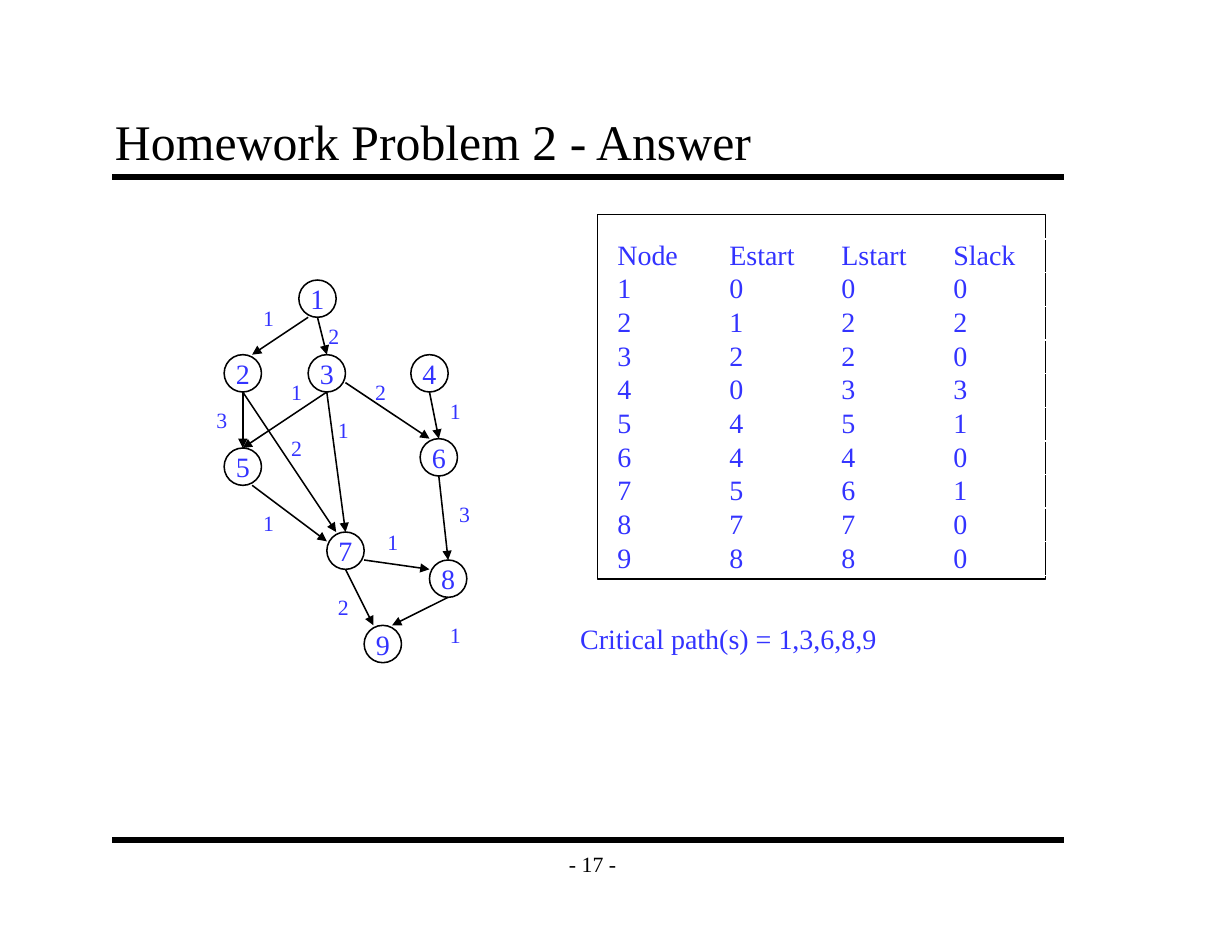
from lxml import etree
from pptx import Presentation
from pptx.dml.color import RGBColor
from pptx.enum import shapes as kinds, text as txt
from pptx.oxml.ns import qn
from pptx.util import Cm, Pt

BLACK = RGBColor(0x00, 0x00, 0x00)
BLUE = RGBColor(0x33, 0x33, 0xFF)
FONT = "Times New Roman"
INCH = Cm(2.54)
STEP = INCH / 12  # grid on which the graph is laid out
NODE_SIZE = 4

# Node number: left and top, in steps within the graph
NODES = {
    1: (10, 0), 2: (2, 8), 3: (11, 8), 4: (22, 8), 5: (2, 18),
    6: (23, 17), 7: (13, 27), 8: (24, 30), 9: (17, 37),
}

# Source, target, delay, where the arrow leaves the source's box,
# where it meets the target's box, and the label's place in the graph
TOP, BOTTOM = (2, 0), (2, 4)
EDGES = [
    (1, 2, 1, (1, 4), (3, 0), (5, 2)),
    (1, 3, 2, BOTTOM, TOP, (12, 4)),
    (2, 5, 3, BOTTOM, TOP, (0, 13)),
    (2, 7, 2, BOTTOM, (1, 0), (8, 16)),
    (3, 5, 1, BOTTOM, TOP, (8, 10)),
    (3, 6, 2, (4, 3), (1, 0), (17, 10)),
    (3, 7, 1, BOTTOM, TOP, (13, 14)),
    (4, 6, 1, BOTTOM, TOP, (25, 12)),
    (5, 7, 1, (3, 4), (0, 1), (5, 24)),
    (6, 8, 3, BOTTOM, TOP, (26, 23)),
    (7, 8, 1, (4, 3), (0, 1), (18.3, 26)),
    (7, 9, 2, BOTTOM, (1, 0), (13, 33)),
    (8, 9, 1, BOTTOM, (3, 0), (25, 36)),
]

SCHEDULE = [
    ("Node", "Estart", "Lstart", "Slack"),
    (1, 0, 0, 0),
    (2, 1, 2, 2),
    (3, 2, 2, 0),
    (4, 0, 3, 3),
    (5, 4, 5, 1),
    (6, 4, 4, 0),
    (7, 5, 6, 1),
    (8, 7, 7, 0),
    (9, 8, 8, 0),
]


def write(frame, content, size=18, color=BLUE, align=txt.PP_ALIGN.LEFT,
          anchor=txt.MSO_ANCHOR.TOP, wrap=False, inset=(Cm(0.25), Cm(0.13))):
    frame.word_wrap = wrap
    frame.vertical_anchor = anchor
    frame.margin_left = frame.margin_right = inset[0]
    frame.margin_top = frame.margin_bottom = inset[1]
    paragraph = frame.paragraphs[0]
    paragraph.alignment = align
    run = paragraph.add_run()
    run.text = str(content)
    run.font.name, run.font.size, run.font.bold = FONT, Pt(size), False
    run.font.color.rgb = color


def add_label(slide, box, content, **style):
    label = slide.shapes.add_textbox(*(int(length) for length in box))
    write(label.text_frame, content, **style)


def add_outline(slide, kind, box):
    """Add an unfilled shape with a thin black edge."""
    outline = slide.shapes.add_shape(kind, *(int(length) for length in box))
    outline.shadow.inherit = False
    outline.fill.background()
    outline.line.color.rgb = BLACK
    outline.line.width = Pt(1)
    return outline


def add_line(slide, start, end, width=1, arrow=False):
    line = slide.shapes.add_connector(
        kinds.MSO_CONNECTOR.STRAIGHT, *(int(length) for length in (*start, *end)))
    line.line.color.rgb = BLACK
    line.line.width = Pt(width)
    properties = line._element.spPr
    if arrow:
        etree.SubElement(properties.find(qn("a:ln")), qn("a:tailEnd"), type="triangle")
    etree.SubElement(properties, qn("a:effectLst"))


def add_frame(slide, left, top, width, height):
    """Add the title, the rules above and below the content, and the page number."""
    for y in (top, top + height):
        add_line(slide, (left, y), (left + width, y), width=4)
    title_height = Cm(1.7)
    add_label(slide, (left - STEP, top - title_height, width, title_height),
              "Homework Problem 2 - Answer", size=32, color=BLACK, wrap=True,
              anchor=txt.MSO_ANCHOR.BOTTOM, inset=(Cm(0.28), Cm(0.15)))
    number_width = Cm(1.9)
    add_label(slide, (left + Cm(9.95), top + height, number_width, Cm(1.07)),
              "- 17 -", size=14, color=BLACK, align=txt.PP_ALIGN.CENTER,
              anchor=txt.MSO_ANCHOR.MIDDLE)


def add_graph(slide, left, top):
    def place(position, offset=(0, 0)):
        return (left + (position[0] + offset[0]) * STEP,
                top + (position[1] + offset[1]) * STEP)

    for number, position in NODES.items():
        node = add_outline(slide, kinds.MSO_SHAPE.OVAL,
                           (*place(position), NODE_SIZE * STEP, NODE_SIZE * STEP))
        write(node.text_frame, number, align=txt.PP_ALIGN.CENTER,
              anchor=txt.MSO_ANCHOR.MIDDLE)
    for source, target, delay, leave, meet, label in EDGES:
        add_line(slide, place(NODES[source], leave), place(NODES[target], meet),
                 arrow=True)
        add_label(slide, (*place(label), Cm(0.75), Cm(0.85)), delay, size=14)


def add_schedule(slide, left, top, width, height):
    add_outline(slide, kinds.MSO_SHAPE.RECTANGLE, (left, top, width, height))
    row_height = Cm(0.76)
    column_width = int(width / 4)
    schedule = slide.shapes.add_table(
        len(SCHEDULE), 4, int(left + Cm(0.2)), int(top + Cm(0.55)),
        4 * column_width, len(SCHEDULE) * row_height).table
    schedule.first_row = schedule.horz_banding = False
    for column in schedule.columns:
        column.width = column_width
    for row, values in zip(schedule.rows, SCHEDULE):
        row.height = row_height
        for cell, value in zip(row.cells, values):
            cell.fill.background()
            cell.margin_left, cell.margin_right = Cm(0.25), 0
            cell.margin_top = cell.margin_bottom = 0
            cell.vertical_anchor = txt.MSO_ANCHOR.MIDDLE
            run = cell.text_frame.paragraphs[0].add_run()
            run.text = str(value)
            run.font.name, run.font.size, run.font.bold = FONT, Pt(18), False
            run.font.color.rgb = BLUE


def main():
    deck = Presentation()
    deck.slide_width, deck.slide_height = Cm(27.94), Cm(21.59)
    slide = deck.slides.add_slide(deck.slide_layouts[6])
    add_frame(slide, Cm(2.54), Cm(4.02), Cm(21.59), Cm(15.03))
    add_graph(slide, Cm(4.66), Cm(6.35))
    add_schedule(slide, Cm(13.55), Cm(4.87), Cm(10.16), Cm(8.26))
    add_label(slide, (Cm(12.91), Cm(13.97), Cm(7.47), Cm(1.02)),
              "Critical path(s) = 1,3,6,8,9")
    deck.save("out.pptx")


if __name__ == "__main__":
    main()
